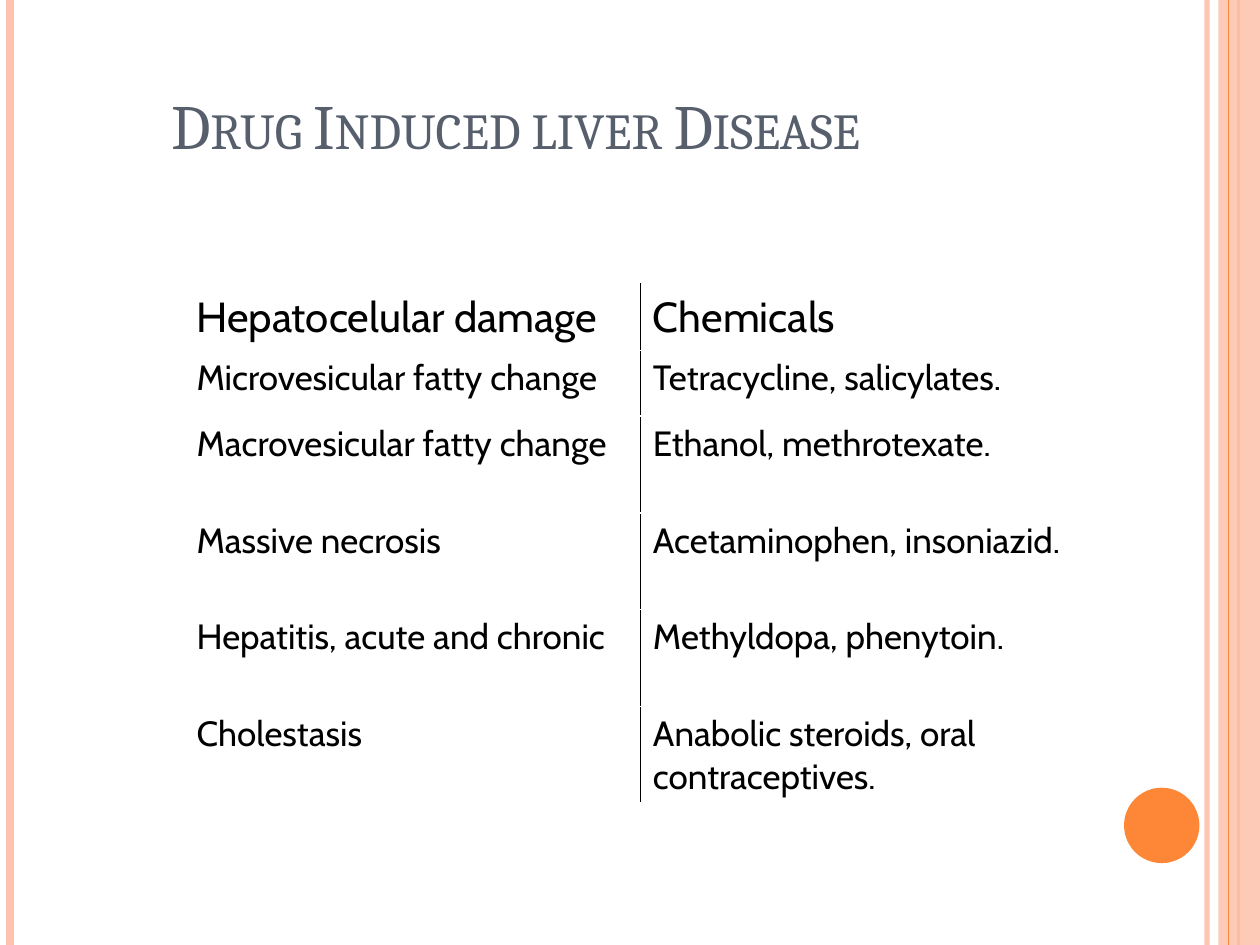
from lxml import etree
from pptx import Presentation
from pptx.dml.color import RGBColor
from pptx.enum import shapes, text
from pptx.oxml import ns
from pptx.util import Cm, Pt

HUES = {"pale": "FEC3AE", "orange": "FE8637", "slate": "575F6D", "ink": "000000"}
ROWS = [
    ("Hepatocelular damage", "Chemicals"),
    ("Microvesicular fatty change", "Tetracycline, salicylates."),
    ("Macrovesicular fatty change", "Ethanol, methrotexate."),
    ("Massive necrosis", "Acetaminophen, insoniazid."),
    ("Hepatitis, acute and chronic", "Methyldopa, phenytoin."),
    ("Cholestasis", "Anabolic steroids, oral contraceptives."),
]
WIDTHS = (9.2, 9)
HEIGHTS = (1.35, 1.32, 1.95, 1.95, 1.95, 1.91)


class Deck:
    head = "Cambria"
    body = "Cabin"

    def __init__(self, wide, high):
        self.file = Presentation()
        self.file.slide_width, self.file.slide_height = Cm(wide), Cm(high)
        self.high = high
        self.slide = self.file.slides.add_slide(self.file.slide_layouts[6])

    def tint(self, hue):
        return RGBColor.from_string(HUES[hue])

    def fade(self, part, alpha):
        for color in part.iter(ns.qn("a:srgbClr")):
            etree.SubElement(color, ns.qn("a:alpha")).set("val", str(alpha * 1000))

    def style(self, frame, font, size, hue):
        for run in frame.paragraphs[0].runs:
            run.font.name, run.font.size, run.font.bold = font, Pt(size), False
            run.font.color.rgb = self.tint(hue)

    def stripe(self, x, hue, width, alpha=100):
        line = self.slide.shapes.add_connector(
            shapes.MSO_CONNECTOR.STRAIGHT, Cm(x), Cm(0), Cm(x), Cm(self.high))
        line.line.color.rgb = self.tint(hue)
        line.line.width = Pt(width)
        props = line._element.spPr
        if alpha < 100:
            self.fade(props, alpha)
        etree.SubElement(props, ns.qn("a:effectLst"))

    def shape(self, kind, x, y, wide, high, hue, alpha=100):
        item = self.slide.shapes.add_shape(kind, Cm(x), Cm(y), Cm(wide), Cm(high))
        item.shadow.inherit = False
        item.fill.solid()
        item.fill.fore_color.rgb = self.tint(hue)
        item.line.fill.background()
        if alpha < 100:
            self.fade(item._element.spPr, alpha)

    def title(self, words, x, y, wide, high):
        frame = self.slide.shapes.add_textbox(Cm(x), Cm(y), Cm(wide), Cm(high)).text_frame
        frame.word_wrap = True
        frame.vertical_anchor = text.MSO_ANCHOR.BOTTOM
        frame.text = words
        self.style(frame, self.head, 36, "slate")
        for run in frame.paragraphs[0].runs:
            run._r.get_or_add_rPr().set("cap", "small")

    def border(self, cell, side, hue, width):
        props = cell._tc.get_or_add_tcPr()
        edge = etree.Element(ns.qn("a:" + side), w=str(Pt(width)))
        fill = etree.SubElement(edge, ns.qn("a:solidFill"))
        etree.SubElement(fill, ns.qn("a:srgbClr"), val=HUES[hue])
        props.insert(0, edge)

    def table(self, rows, x, y, widths, heights):
        grid = self.slide.shapes.add_table(
            len(rows), len(widths), Cm(x), Cm(y), Cm(sum(widths)), Cm(sum(heights))).table
        grid.first_row = grid.horz_banding = False
        for col, wide in zip(grid.columns, widths):
            col.width = Cm(wide)
        for r, (row, high) in enumerate(zip(rows, heights)):
            grid.rows[r].height = Cm(high)
            size = 20 if r else 24
            for c, words in enumerate(row):
                cell = grid.cell(r, c)
                cell.fill.background()
                cell.vertical_anchor = text.MSO_ANCHOR.TOP if r else text.MSO_ANCHOR.MIDDLE
                cell.text_frame.text = words
                cell.text_frame.paragraphs[0].space_before = Pt(size * 0.2)
                self.style(cell.text_frame, self.body, size, "ink")
                self.border(cell, "lnL" if c else "lnR", "ink", 1)


def main():
    deck = Deck(25.4, 19.05)
    deck.stripe(24.33, "pale", 3, 93)
    deck.stripe(0.2, "pale", 4.5)
    deck.stripe(24.97, "orange", 1.5)
    deck.shape(shapes.MSO_SHAPE.RECTANGLE, 24.56, 0, 0.84, 19.05, "pale", 87)
    deck.stripe(24.77, "orange", 0.75)
    deck.shape(shapes.MSO_SHAPE.OVAL, 22.66, 15.88, 1.52, 1.52, "orange")
    deck.title("Drug Induced liver Disease", 3.2, 0.58, 21.64, 2.82)
    deck.table(ROWS, 3.71, 5.72, WIDTHS, HEIGHTS)
    deck.file.save("out.pptx")


if __name__ == "__main__":
    main()
